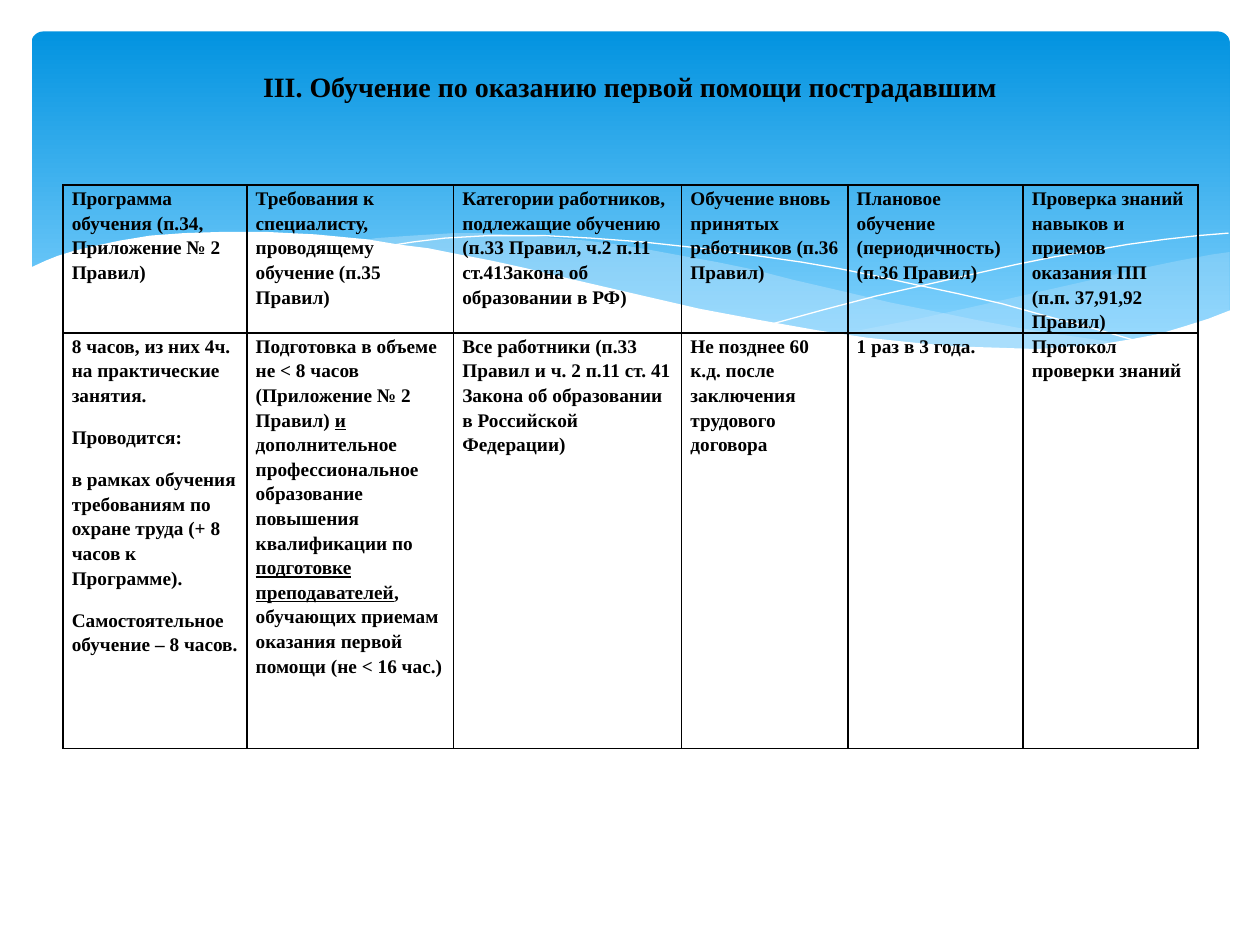
from dataclasses import dataclass

from lxml.etree import SubElement
from pptx import Presentation
from pptx.dml.color import RGBColor
from pptx.enum.shapes import MSO_SHAPE
from pptx.enum.text import MSO_ANCHOR, PP_ALIGN
from pptx.oxml.ns import qn
from pptx.util import Inches, Pt


@dataclass(frozen=True)
class Theme:
    font: str = "Times New Roman"
    title_size: int = 16
    table_size: int = 11
    ink: str = "000000"
    white: str = "FFFFFF"
    banner_top: str = "0293E0"
    banner_bottom: str = "83D3FE"
    wave: str = "C6E7FC"


THEME = Theme()

RIGHT_WAVE = [
    (9.76, 2), (9.62, 2.02), (9.35, 2.07), (9.06, 2.13), (8.76, 2.2), (8.32, 2.3),
    (7.79, 2.42), (7.29, 2.53), (6.83, 2.62), (6.61, 2.65), (6.91, 2.69),
    (7.19, 2.72), (7.45, 2.75), (7.69, 2.77), (8.03, 2.78), (8.35, 2.77),
    (8.63, 2.75), (8.89, 2.72), (9.13, 2.67), (9.35, 2.62), (9.49, 2.57),
    (9.63, 2.52), (9.76, 2.47),
]
MIDDLE_WAVE = [
    (8.93, 2.73), (8.66, 2.69), (8.37, 2.65), (8.07, 2.6), (7.75, 2.54),
    (7.41, 2.47), (7.06, 2.4), (6.68, 2.31), (6.29, 2.22), (5.98, 2.14),
    (5.69, 2.08), (5.41, 2.03), (5.14, 1.98), (4.89, 1.94), (4.65, 1.91),
    (4.42, 1.89), (4.2, 1.87), (3.99, 1.86), (3.8, 1.85), (3.61, 1.85),
    (3.28, 1.87), (2.99, 1.89), (2.86, 1.91), (3.23, 1.96), (3.62, 2.03),
    (4.04, 2.11), (4.49, 2.22), (4.91, 2.32), (5.3, 2.4), (5.66, 2.48),
    (6.01, 2.55), (6.34, 2.61), (6.65, 2.66), (6.95, 2.7), (7.22, 2.74),
    (7.48, 2.76), (7.73, 2.77), (7.96, 2.78), (8.28, 2.78), (8.57, 2.77),
    (8.76, 2.75),
]
FALLING_LINE = [
    (3.09, 1.95), (3.28, 1.92), (3.53, 1.89), (3.87, 1.87), (4.33, 1.87),
    (4.69, 1.89), (5.1, 1.92), (5.56, 1.97), (6.08, 2.04), (6.36, 2.08),
    (6.65, 2.13), (6.95, 2.19), (7.27, 2.26), (7.6, 2.33), (7.95, 2.41),
    (8.31, 2.51), (8.69, 2.61), (9.07, 2.72),
]
RISING_LINE = [
    (6.13, 2.57), (6.53, 2.46), (6.95, 2.35), (7.48, 2.23), (8.06, 2.1),
    (8.36, 2.04), (8.66, 1.99), (8.95, 1.94), (9.24, 1.9), (9.51, 1.87),
    (9.75, 1.85),
]
WHITE_WAVE = [
    (9.77, 2.46), (9.59, 2.53), (9.4, 2.59), (9.2, 2.65), (8.99, 2.69),
    (8.75, 2.73), (8.5, 2.75), (8.23, 2.77), (7.93, 2.76), (7.61, 2.75),
    (7.26, 2.72), (6.88, 2.68), (6.48, 2.62), (6.03, 2.54), (5.55, 2.45),
    (5.03, 2.33), (4.47, 2.2), (4.18, 2.13), (3.91, 2.07), (3.65, 2.02),
    (3.4, 1.97), (3.16, 1.94), (2.92, 1.9), (2.71, 1.88), (2.5, 1.86),
    (2.3, 1.85), (2.11, 1.84), (1.77, 1.84), (1.46, 1.85), (1.19, 1.87),
    (0.95, 1.91), (0.76, 1.95), (0.59, 1.99), (0.46, 2.03), (0.36, 2.07),
    (0.23, 2.13), (0.23, 3.29), (9.77, 3.29),
]

TITLE = "III. Обучение по оказанию первой помощи пострадавшим"
COLUMN_WIDTHS = [1.46, 1.64, 1.81, 1.32, 1.39, 1.39]
ROW_HEIGHTS = [1.11, 3.3]
# A cell is a list of paragraphs; words between underscores are underlined.
ROWS = [
    [
        ["Программа обучения (п.34, Приложение № 2 Правил)"],
        ["Требования к специалисту, проводящему обучение (п.35 Правил)"],
        ["Категории работников, подлежащие обучению (п.33 Правил, ч.2 п.11 "
         "ст.41Закона об образовании в РФ)"],
        ["Обучение вновь принятых работников (п.36 Правил)"],
        ["Плановое обучение (периодичность) (п.36 Правил)"],
        ["Проверка знаний навыков и приемов оказания ПП (п.п. 37,91,92 Правил)"],
    ],
    [
        ["8 часов, из них 4ч. на практические занятия.",
         "Проводится:",
         "в рамках обучения требованиям по охране труда (+ 8 часов к Программе).",
         "Самостоятельное обучение – 8 часов."],
        ["Подготовка в объеме не < 8 часов (Приложение № 2 Правил) _и_ "
         "дополнительное профессиональное образование повышения квалификации по "
         "_подготовке преподавателей_, обучающих приемам оказания первой помощи "
         "(не < 16 час.)"],
        ["Все работники (п.33 Правил и ч. 2 п.11 ст. 41 Закона об образовании "
         "в Российской Федерации)"],
        ["Не позднее 60 к.д. после заключения трудового договора"],
        ["1 раз в 3 года."],
        ["Протокол проверки знаний"],
    ],
]


def write_text(frame, paragraphs, size, align=PP_ALIGN.LEFT):
    """Fill a text frame, underlining the words between underscores."""
    frame.word_wrap = True
    for index, text in enumerate(paragraphs):
        para = frame.paragraphs[0] if index == 0 else frame.add_paragraph()
        para.alignment = align
        para.line_spacing = 1.15
        para.space_after = Pt(10)
        for position, part in enumerate(text.split("_")):
            span = para.add_run()
            span.text = part
            span.font.name = THEME.font
            span.font.size = Pt(size)
            span.font.bold = True
            span.font.underline = position % 2 == 1
            span.font.color.rgb = RGBColor.from_string(THEME.ink)


def add_cell_borders(cell, color, width):
    properties = cell._tc.get_or_add_tcPr()
    for side in ("a:lnL", "a:lnR", "a:lnT", "a:lnB"):
        line = SubElement(properties, qn(side), w=str(Pt(width)))
        fill = SubElement(line, qn("a:solidFill"))
        SubElement(fill, qn("a:srgbClr"), val=color)


class SlideBuilder:
    def __init__(self, slide, theme):
        self.shapes = slide.shapes
        self.theme = theme

    def banner(self, left, top, width, height):
        box = self.shapes.add_shape(MSO_SHAPE.ROUNDED_RECTANGLE, Inches(left),
                                    Inches(top), Inches(width), Inches(height))
        box.adjustments[0] = 0.034
        box.shadow.inherit = False
        box.line.fill.background()
        box.fill.gradient()
        box.fill.gradient_angle = 270
        stops = ((0, self.theme.banner_top), (0.9, self.theme.banner_bottom))
        for stop, (position, color) in zip(box.fill.gradient_stops, stops):
            stop.position = position
            stop.color.rgb = RGBColor.from_string(color)

    def outline(self, points, closed):
        start, *rest = [(Inches(x), Inches(y)) for x, y in points]
        builder = self.shapes.build_freeform(*start)
        builder.add_line_segments(rest, close=closed)
        shape = builder.convert_to_shape()
        shape.shadow.inherit = False
        return shape

    def wave(self, points, color, opacity=100):
        shape = self.outline(points, closed=True)
        shape.line.fill.background()
        shape.fill.solid()
        shape.fill.fore_color.rgb = RGBColor.from_string(color)
        if opacity < 100:
            for node in shape.fill._xPr.iterfind(f"{qn('a:solidFill')}/{qn('a:srgbClr')}"):
                SubElement(node, qn("a:alpha"), val=str(opacity * 1000))

    def hairline(self, points):
        shape = self.outline(points, closed=False)
        shape.fill.background()
        shape.line.color.rgb = RGBColor.from_string(self.theme.white)
        shape.line.width = Pt(0)

    def title(self, text, left, top, width, height):
        box = self.shapes.add_textbox(Inches(left), Inches(top), Inches(width), Inches(height))
        box.text_frame.vertical_anchor = MSO_ANCHOR.TOP
        box.text_frame.margin_top = Inches(0.21)
        write_text(box.text_frame, [text], self.theme.title_size, PP_ALIGN.CENTER)

    def table(self, rows, left, top, widths, heights):
        table = self.shapes.add_table(len(rows), len(widths), Inches(left), Inches(top),
                                      Inches(sum(widths)), Inches(sum(heights))).table
        table.first_row = table.horz_banding = False
        for column, width in zip(table.columns, widths):
            column.width = Inches(width)
        for row, height, texts in zip(table.rows, heights, rows):
            row.height = Inches(height)
            for cell, paragraphs in zip(row.cells, texts):
                cell.margin_left = cell.margin_right = Inches(0.07)
                cell.margin_top = cell.margin_bottom = 0
                add_cell_borders(cell, self.theme.ink, 1)
                cell.fill.background()
                write_text(cell.text_frame, paragraphs, self.theme.table_size)


def main():
    deck = Presentation()
    deck.slide_width, deck.slide_height = Inches(10), Inches(7.5)
    page = SlideBuilder(deck.slides.add_slide(deck.slide_layouts[6]), THEME)
    page.banner(0.25, 0.25, 9.51, 2.7)
    page.wave(RIGHT_WAVE, THEME.wave, opacity=29)
    page.wave(MIDDLE_WAVE, THEME.wave, opacity=40)
    page.hairline(FALLING_LINE)
    page.hairline(RISING_LINE)
    page.wave(WHITE_WAVE, THEME.white)
    page.table(ROWS, 0.5, 1.47, COLUMN_WIDTHS, ROW_HEIGHTS)
    page.title(TITLE, 0.5, 0.3, 9, 0.93)
    deck.save("out.pptx")


if __name__ == "__main__":
    main()
